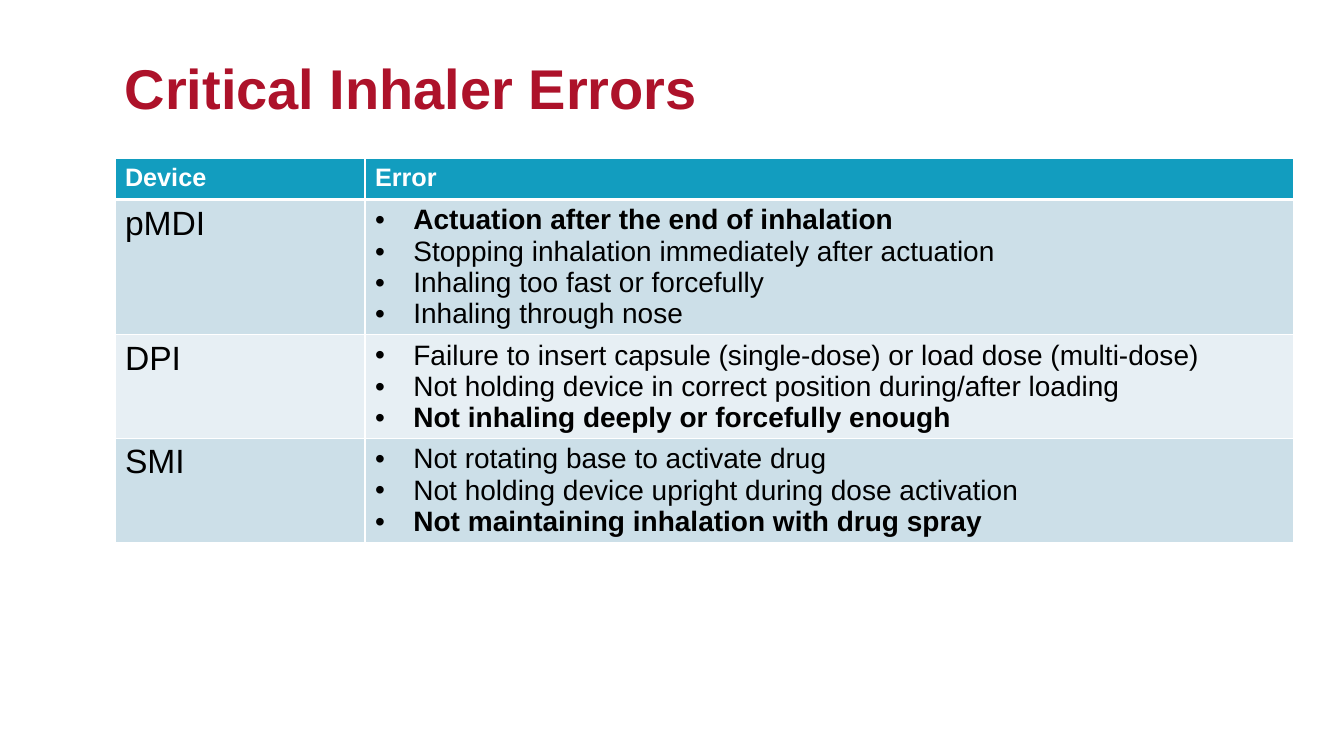
from lxml.etree import SubElement
from pptx import Presentation
from pptx.dml.color import RGBColor
from pptx.enum.text import MSO_ANCHOR
from pptx.oxml.ns import qn
from pptx.util import Inches, Pt

CRIMSON = RGBColor(0xAD, 0x12, 0x2A)
TEAL = RGBColor(0x12, 0x9D, 0xBF)
PALE_BLUE = RGBColor(0xCC, 0xDF, 0xE8)
PALE_GREY = RGBColor(0xE7, 0xEF, 0xF4)
WHITE = RGBColor(0xFF, 0xFF, 0xFF)
BLACK = RGBColor(0x00, 0x00, 0x00)

LEFT, WIDTH = 1.14, 11.69
COLUMN_WIDTHS = (2.48, 9.21)
ROW_HEIGHT = 0.41
HEADINGS = ("Device", "Error")
DEVICE_ERRORS = [
    ("pMDI", [
        ("Actuation after the end of inhalation", True),
        ("Stopping inhalation immediately after actuation", False),
        ("Inhaling too fast or forcefully", False),
        ("Inhaling through nose", False),
    ]),
    ("DPI", [
        ("Failure to insert capsule (single-dose) or load dose (multi-dose)", False),
        ("Not holding device in correct position during/after loading", False),
        ("Not inhaling deeply or forcefully enough", True),
    ]),
    ("SMI", [
        ("Not rotating base to activate drug", False),
        ("Not holding device upright during dose activation", False),
        ("Not maintaining inhalation with drug spray", True),
    ]),
]


def write_text(paragraph, text, size, color=BLACK, bold=False, bullet=False):
    if bullet:
        properties = paragraph._p.get_or_add_pPr()
        properties.set("marL", str(Inches(0.38)))
        properties.set("indent", str(-Inches(0.38)))
        SubElement(properties, qn("a:buFont"), typeface="Arial")
        SubElement(properties, qn("a:buChar"), char="•")
    run = paragraph.add_run()
    run.text = text
    run.font.name = "Arial"
    run.font.size = Pt(size)
    run.font.bold = bold
    run.font.color.rgb = color


def style_cell(cell, color, top=1, bottom=1):
    properties = cell._tc.get_or_add_tcPr()
    for side, width in (("L", 1), ("R", 1), ("T", top), ("B", bottom)):
        line = SubElement(properties, qn(f"a:ln{side}"), w=str(Pt(width)))
        fill = SubElement(line, qn("a:solidFill"))
        SubElement(fill, qn("a:srgbClr"), val=str(WHITE))
    cell.fill.solid()
    cell.fill.fore_color.rgb = color


def add_title(slide, text, left, top, width, height):
    box = slide.shapes.add_textbox(
        Inches(left), Inches(top), Inches(width), Inches(height))
    frame = box.text_frame
    frame.word_wrap = True
    frame.vertical_anchor = MSO_ANCHOR.MIDDLE
    frame.margin_left = frame.margin_right = Inches(0.1)
    frame.margin_top = frame.margin_bottom = 0
    paragraph = frame.paragraphs[0]
    paragraph.line_spacing = 0.9
    write_text(paragraph, text, 40, color=CRIMSON, bold=True)


def add_error_table(slide, left, top, width, height):
    graphic = slide.shapes.add_table(
        len(DEVICE_ERRORS) + 1, len(HEADINGS),
        Inches(left), Inches(top), Inches(width), Inches(height))
    table = graphic.table
    for column, column_width in zip(table.columns, COLUMN_WIDTHS):
        column.width = Inches(column_width)
    for row in table.rows:
        row.height = Inches(ROW_HEIGHT)
    graphic.height = Inches(height)

    for index, heading in enumerate(HEADINGS):
        cell = table.cell(0, index)
        style_cell(cell, TEAL, bottom=3)
        write_text(cell.text_frame.paragraphs[0], heading, 18, color=WHITE, bold=True)

    for row, (device, errors) in enumerate(DEVICE_ERRORS, start=1):
        device_cell, error_cell = table.cell(row, 0), table.cell(row, 1)
        for cell in (device_cell, error_cell):
            style_cell(cell, PALE_BLUE if row % 2 else PALE_GREY,
                       top=3 if row == 1 else 1)
        write_text(device_cell.text_frame.paragraphs[0], device, 24)
        frame = error_cell.text_frame
        for index, (error, critical) in enumerate(errors):
            paragraph = frame.add_paragraph() if index else frame.paragraphs[0]
            write_text(paragraph, error, 20, bold=critical, bullet=True)


def main():
    presentation = Presentation()
    presentation.slide_width = Inches(13.33)
    presentation.slide_height = Inches(7.5)
    slide = presentation.slides.add_slide(presentation.slide_layouts[6])
    add_error_table(slide, LEFT, 1.57, WIDTH, 4.13)
    add_title(slide, "Critical Inhaler Errors", LEFT, 0.24, WIDTH, 1.34)
    presentation.save("out.pptx")


if __name__ == "__main__":
    main()
